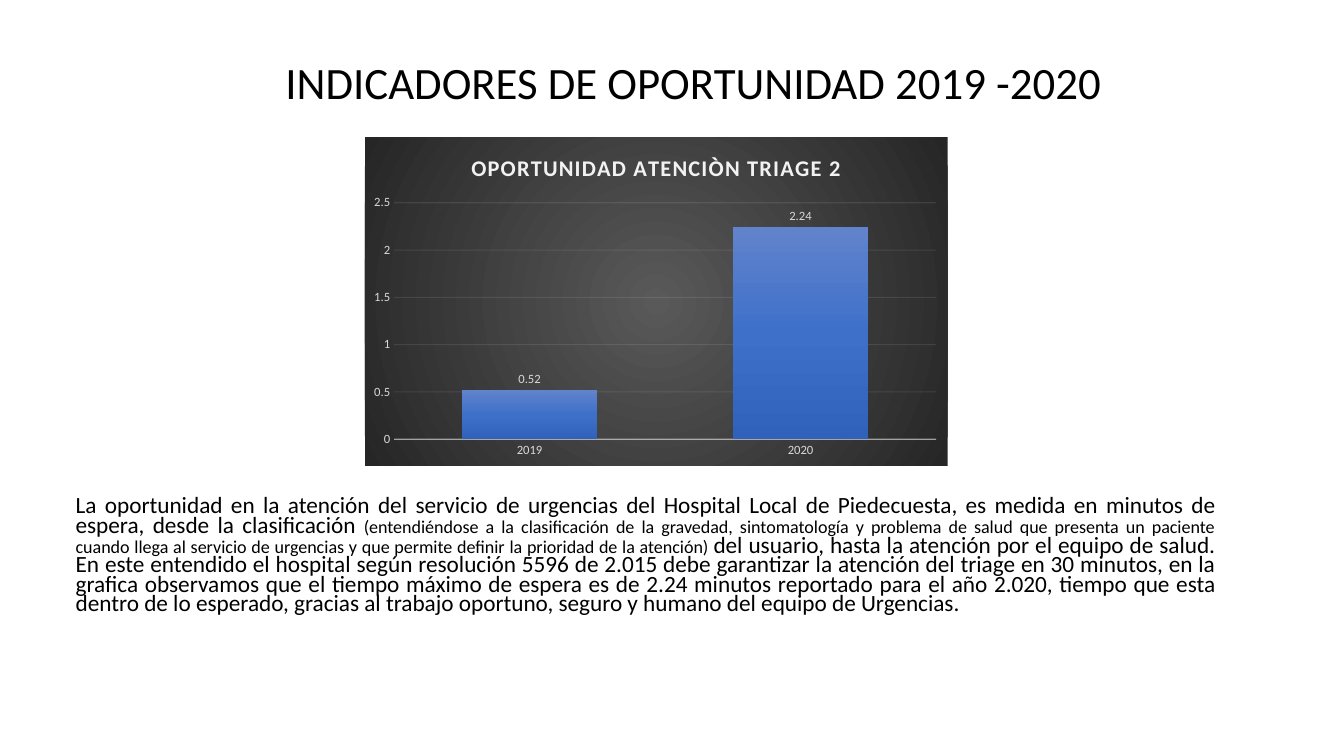
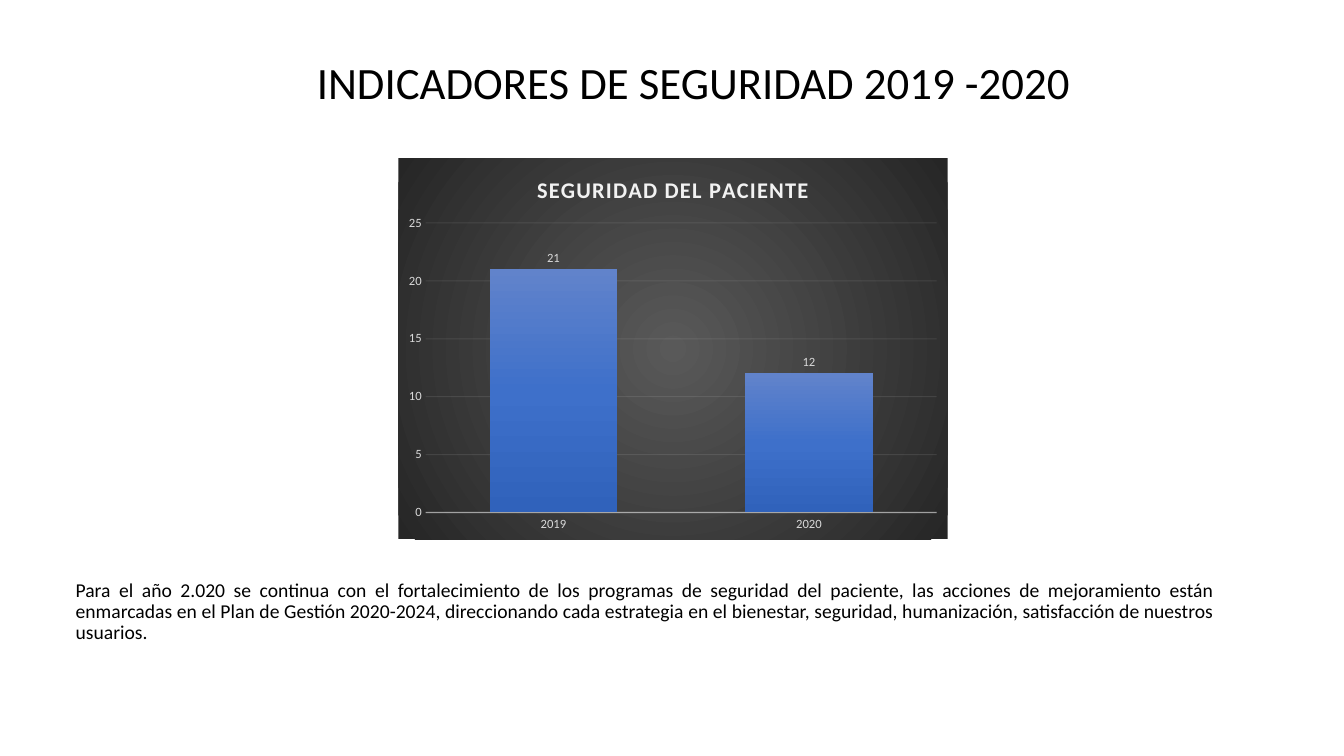
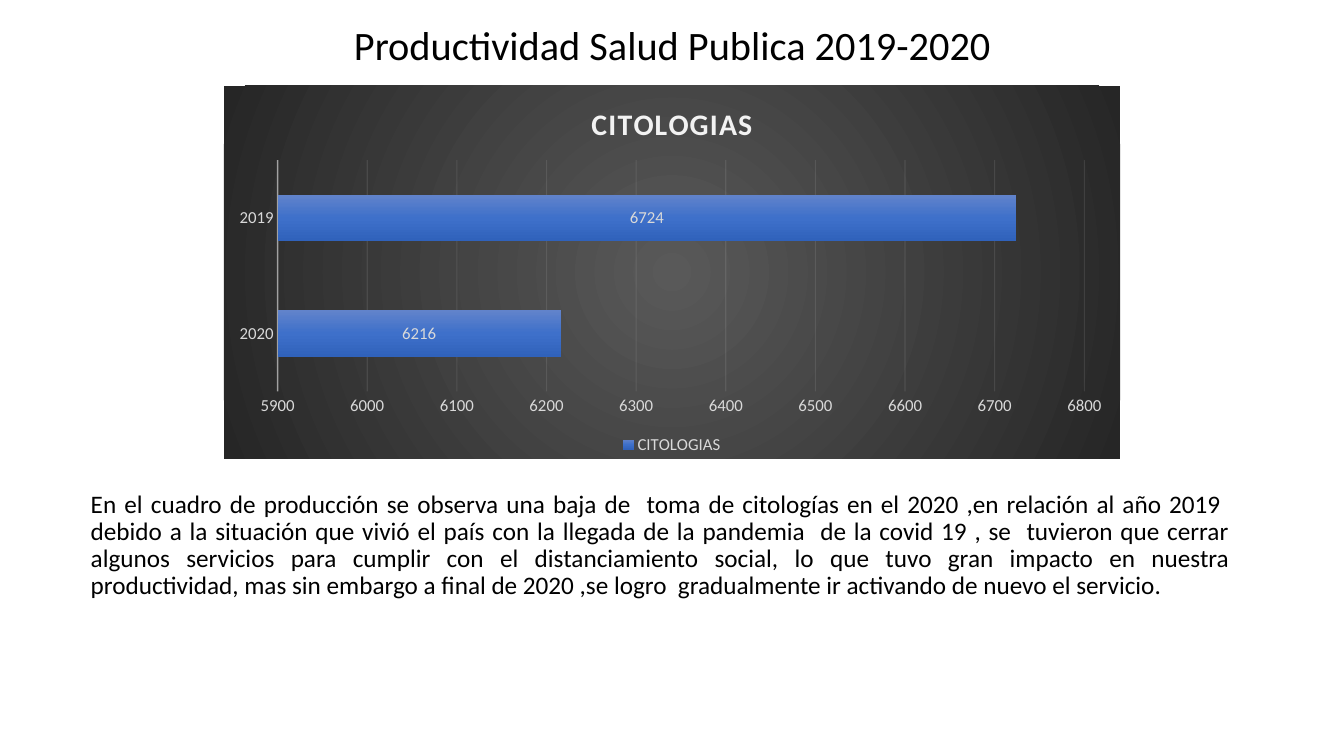
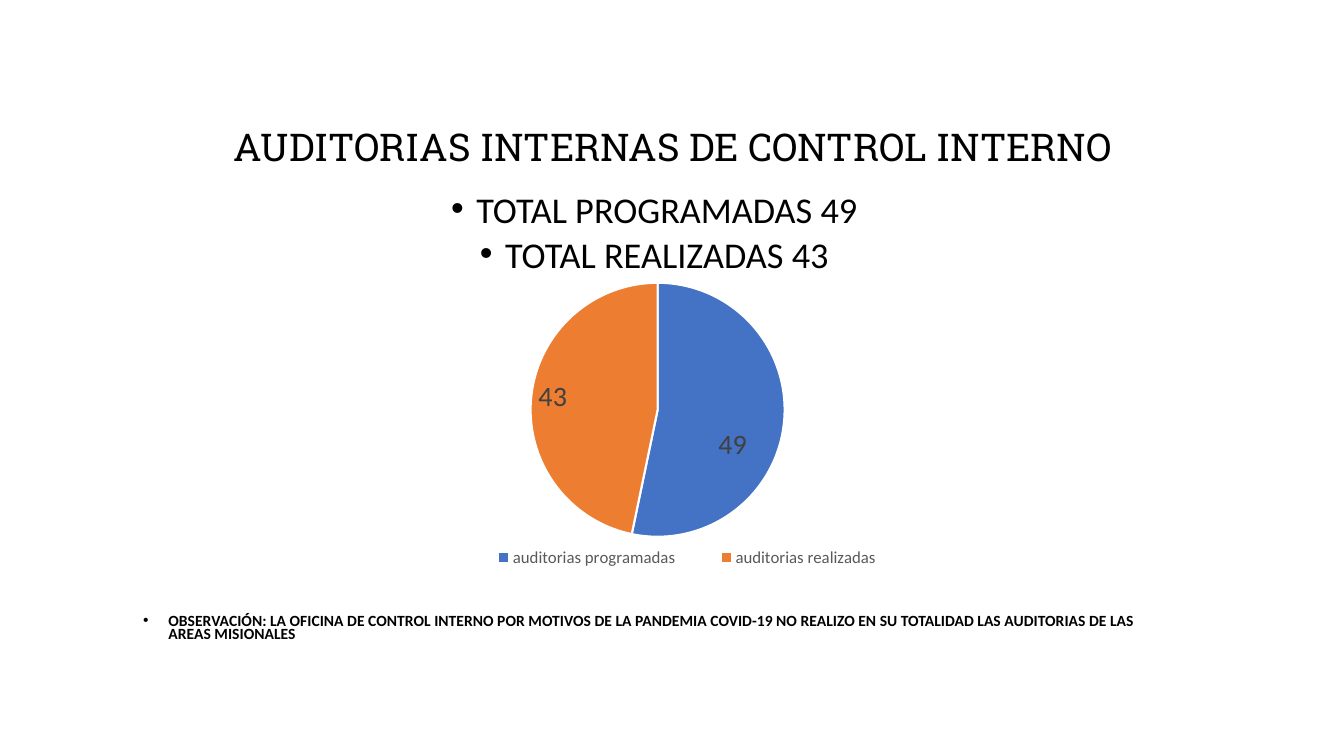
from dataclasses import dataclass

from lxml import etree
from pptx import Presentation
from pptx.chart.data import CategoryChartData
from pptx.dml.color import RGBColor
from pptx.enum import chart as ch, text as tx
from pptx.oxml.ns import nsdecls, qn
from pptx.util import Inches, Pt


@dataclass(frozen=True)
class Theme:
    font: str = "Calibri"
    slab: str = "Roboto Slab"
    ink: str = "000000"
    white: str = "FFFFFF"
    chart_title: str = "F2F2F2"
    chart_text: str = "D9D9D9"
    legend_text: str = "595959"
    pie_text: str = "404040"
    backdrop: tuple = ((0, "595959"), (100, "262626"))
    bar: tuple = ((0, "6183CB"), (50, "3E70CA"), (100, "3062BB"))
    slices: tuple = ("4472C4", "ED7D31")
    title_size: float = 32
    pie_label_size: float = 20
    legend_size: float = 12


THEME = Theme()
TITLE_BOX = (1.13, 0.12, 11.5, 1.45)
CENTER, JUSTIFY = tx.PP_ALIGN.CENTER, tx.PP_ALIGN.JUSTIFY
RADIAL = ('<a:path path="circle"><a:fillToRect l="50000" t="50000" '
          'r="50000" b="50000"/></a:path>')
DOWNWARD = '<a:lin ang="5400000" scaled="0"/>'


def style(font, size, color=THEME.ink, bold=False, name=THEME.font):
    font.name, font.size, font.bold = name, Pt(size), bold
    font.color.rgb = RGBColor.from_string(color)


def move(shape, box):
    shape.left, shape.top, shape.width, shape.height = map(Inches, box)


def fill_placeholder(shape, box, paragraphs, anchor=tx.MSO_ANCHOR.MIDDLE):
    """Move a placeholder and give it one paragraph per list of text pieces."""
    move(shape, box)
    frame = shape.text_frame
    frame.word_wrap, frame.auto_size = True, tx.MSO_AUTO_SIZE.NONE
    frame.vertical_anchor = anchor
    for number, pieces in enumerate(paragraphs):
        paragraph = frame.add_paragraph() if number else frame.paragraphs[0]
        for piece in pieces:
            paragraph.add_run().text = piece
    return frame.paragraphs


def set_title(slide, words, box=TITLE_BOX, size=THEME.title_size, font=THEME.font):
    [title] = fill_placeholder(slide.shapes.title, box, [[words]])
    title.alignment, title.line_spacing = CENTER, 0.9
    style(title.font, size, name=font)


def indent(paragraph, hanging):
    props = paragraph._p.get_or_add_pPr()
    props.set("marL", str(Inches(hanging)))
    props.set("indent", str(-Inches(hanging)))
    return props


def set_comment(slide, pieces, box, size, spacing=0.9):
    [comment] = fill_placeholder(slide.placeholders[1], box, [pieces])
    etree.SubElement(indent(comment, 0), qn("a:buNone"))
    comment.alignment, comment.line_spacing = JUSTIFY, spacing
    comment.space_before = Pt(0)
    style(comment.font, size)
    return comment


def gradient(stops, direction):
    marks = "".join(f'<a:gs pos="{at * 1000}"><a:srgbClr val="{color}"/></a:gs>'
                    for at, color in stops)
    return etree.fromstring(f'<a:gradFill {nsdecls("a")} rotWithShape="1">'
                            f'<a:gsLst>{marks}</a:gsLst>{direction}</a:gradFill>')


def set_layout(parent, index, **fractions):
    """Place a chart part by hand, in fractions of the chart's size."""
    for old in parent.findall(qn("c:layout")):
        parent.remove(old)
    layout = etree.Element(qn("c:layout"))
    manual = etree.SubElement(layout, qn("c:manualLayout"))
    for tag, value in fractions.items():
        etree.SubElement(manual, qn(f"c:{tag}")).set("val", str(value))
    parent.insert(index, layout)


def set_plot_area(chart, x, y, w, h):
    set_layout(chart.element.xpath("c:chart/c:plotArea")[0], 0, layoutTarget="inner",
               xMode="edge", yMode="edge", x=x, y=y, w=w, h=h)


def add_chart(slide, kind, box, categories, name, values):
    data = CategoryChartData()
    data.categories = categories
    data.add_series(name, values)
    chart = slide.shapes.add_chart(kind, *map(Inches, box), data).chart
    style(chart.font, 10)
    chart.has_title = chart.has_legend = False
    plot = chart.plots[0]
    plot.vary_by_categories = False
    plot.has_data_labels = True
    plot.data_labels.show_value = True
    return chart


def add_legend(chart, color):
    chart.has_legend = True
    chart.legend.position = ch.XL_LEGEND_POSITION.BOTTOM
    chart.legend.include_in_layout = False
    style(chart.legend.font, THEME.legend_size, color)


def set_chart_title(chart, words, size):
    chart.has_title = True
    frame = chart.chart_title.text_frame
    frame.text = words
    run = frame.paragraphs[0].runs[0]
    style(run.font, size, THEME.chart_title, bold=True)
    run._r.get_or_add_rPr().set("spc", "100")
    chart.chart_title.include_in_layout = False


def set_line(chart, line, width, place, opacity):
    line.width = Pt(width)
    line.color.rgb = RGBColor.from_string(THEME.chart_title)
    [color] = chart.element.xpath(f"c:chart/c:plotArea/{place}//a:srgbClr")
    etree.SubElement(color, qn("a:alpha")).set("val", str(opacity * 1000))


def style_axes(chart, size, scale):
    category, value = chart.category_axis, chart.value_axis
    value.minimum_scale, value.maximum_scale, value.major_unit = scale
    value.has_major_gridlines = True
    for axis in (category, value):
        axis.major_tick_mark = axis.minor_tick_mark = ch.XL_TICK_MARK.NONE
        style(axis.tick_labels.font, size, THEME.chart_text)
    value.format.line.fill.background()
    set_line(chart, category.format.line, 1, "c:catAx/c:spPr", 54)
    set_line(chart, value.major_gridlines.format.line, 0.75, "c:valAx/c:majorGridlines", 10)


def add_dark_bars(slide, box, title, categories, values, scale, plot_area,
                  kind=ch.XL_CHART_TYPE.COLUMN_CLUSTERED, name="Series 1",
                  title_size=16, size=9, gap=100, overlap=-24,
                  label_place=ch.XL_LABEL_POSITION.OUTSIDE_END):
    chart = add_chart(slide, kind, box, categories, name, values)
    set_chart_title(chart, title, title_size)
    style_axes(chart, size, scale)
    plot = chart.plots[0]
    plot.gap_width, plot.overlap = gap, overlap
    plot.data_labels.position = label_place
    style(plot.data_labels.font, size, THEME.chart_text)
    [bars] = chart.element.xpath(".//c:ser")
    bars.get_or_add_spPr().append(gradient(THEME.bar, DOWNWARD))
    backdrop = etree.Element(qn("c:spPr"))
    backdrop.append(gradient(THEME.backdrop, RADIAL))
    etree.SubElement(etree.SubElement(backdrop, qn("a:ln")), qn("a:noFill"))
    chart.element.find(qn("c:chart")).addnext(backdrop)
    set_plot_area(chart, *plot_area)
    return chart


def add_audit_pie(slide):
    chart = add_chart(slide, ch.XL_CHART_TYPE.PIE, (3.72, 2.68, 5.9, 3.15),
                      ("auditorias programadas", "auditorias realizadas"),
                      "Series 1", (49, 43))
    plot = chart.plots[0]
    plot.vary_by_categories = True
    style(plot.data_labels.font, THEME.pie_label_size, THEME.pie_text)
    label_shifts = ((0.02, 0.09), (-0.07, -0.02))
    for number, (color, (x, y)) in enumerate(zip(THEME.slices, label_shifts)):
        point = plot.series[0].points[number]
        point.format.fill.solid()
        point.format.fill.fore_color.rgb = RGBColor.from_string(color)
        point.format.line.color.rgb = RGBColor.from_string(THEME.white)
        point.format.line.width = Pt(1.5)
        style(point.data_label.font, THEME.pie_label_size, THEME.pie_text)
        point.data_label.position = ch.XL_LABEL_POSITION.CENTER
        set_layout(chart.element.xpath(".//c:dLbl")[number], 1, x=x, y=y)
    add_legend(chart, THEME.legend_text)
    set_layout(chart.element.xpath("c:chart/c:legend")[0], 1, xMode="edge",
               yMode="edge", x=0.14, y=0.86, w=0.77, h=0.09)
    set_plot_area(chart, 0.26, 0.04, 0.43, 0.8)


def opportunity_slide(slide):
    set_title(slide, "INDICADORES DE OPORTUNIDAD 2019 -2020")
    add_dark_bars(slide, (3.62, 1.36, 5.78, 3.26), "OPORTUNIDAD ATENCIÒN TRIAGE 2",
                  ("2019", "2020"), (0.52, 2.24), (0, 2.5, 0.5), (0.05, 0.2, 0.93, 0.72))
    comment = set_comment(slide, (
        "La oportunidad en la atención del servicio de urgencias del Hospital Local de "
        "Piedecuesta, es medida en minutos de espera, desde la clasificación ",
        "(entendiéndose a la clasificación de la gravedad, sintomatología y problema de "
        "salud que presenta un paciente cuando llega al servicio de urgencias y que "
        "permite definir la prioridad de la atención) ",
        "del usuario, hasta la atención por el equipo de salud. En este entendido el "
        "hospital según resolución 5596 de 2.015 debe garantizar la atención del triage "
        "en 30 minutos, en la grafica observamos que el tiempo máximo de espera es de "
        "2.24 minutos reportado para el año 2.020, tiempo que esta dentro de lo "
        "esperado, gracias al trabajo oportuno, seguro y humano del equipo de Urgencias.",
    ), (0.65, 4.8, 11.5, 1.45), 16.6, spacing=0.7)
    comment.runs[1].font.size = Pt(12.9)


def safety_slide(slide):
    set_title(slide, "INDICADORES DE SEGURIDAD 2019 -2020")
    add_dark_bars(slide, (3.95, 1.57, 5.45, 3.78), "SEGURIDAD DEL PACIENTE",
                  ("2019", "2020"), (21, 12), (0, 25, 5), (0.05, 0.17, 0.93, 0.76))
    set_comment(slide, [
        "Para el año 2.020 se continua con el fortalecimiento de los programas de "
        "seguridad del paciente, las acciones de mejoramiento están enmarcadas en el "
        "Plan de Gestión 2020-2024, direccionando cada estrategia en el bienestar, "
        "seguridad, humanización, satisfacción de nuestros usuarios.",
    ], (0.65, 5.35, 11.5, 1.45), 14)


def productivity_slide(slide):
    set_title(slide, "Productividad Salud Publica 2019-2020", (0.92, 0.25, 11.5, 0.45), 28.8)
    chart = add_dark_bars(slide, (2.22, 0.85, 8.89, 3.7), "CITOLOGIAS",
                          ("2020", "2019"), (6216, 6724), (5900, 6800, 100),
                          (0.06, 0.2, 0.9, 0.62), kind=ch.XL_CHART_TYPE.BAR_STACKED,
                          name="CITOLOGIAS", title_size=21.3, size=12, gap=150,
                          overlap=100, label_place=ch.XL_LABEL_POSITION.CENTER)
    add_legend(chart, THEME.chart_text)
    set_comment(slide, [
        "En el cuadro de producción se observa una baja de  toma de citologías en el "
        "2020 ,en relación al año 2019  debido a la situación que vivió el país con la "
        "llegada de la pandemia  de la covid 19 , se  tuvieron que cerrar algunos "
        "servicios para cumplir con el distanciamiento social, lo que tuvo gran impacto "
        "en nuestra productividad, mas sin embargo a final de 2020 ,se logro  "
        "gradualmente ir activando de nuevo el servicio.",
    ], (0.8, 4.69, 11.5, 1.45), 18)


def audit_slide(slide):
    set_title(slide, "AUDITORIAS INTERNAS DE CONTROL INTERNO", (1.67, 0.9, 10, 1.15),
              27.3, THEME.slab)
    items = fill_placeholder(slide.placeholders[1], (1.32, 1.93, 10.34, 4.65), [
        ["TOTAL PROGRAMADAS 49"],
        ["TOTAL REALIZADAS 43"],
        ["OBSERVACIÓN: LA OFICINA DE CONTROL INTERNO POR MOTIVOS DE LA PANDEMIA "
         "COVID-19 NO REALIZO EN SU TOTALIDAD LAS AUDITORIAS DE LAS AREAS MISIONALES"],
    ], tx.MSO_ANCHOR.TOP)
    for item, gap in zip(items, (0, 10, 244)):
        indent(item, 0.25)
        item.line_spacing, item.space_before = 0.7, Pt(gap)
        item.alignment = CENTER
        style(item.font, 25.9)
    items[-1].alignment = tx.PP_ALIGN.LEFT
    style(items[-1].font, 11.1, bold=True)
    add_audit_pie(slide)


def main():
    deck = Presentation()
    deck.slide_width, deck.slide_height = Inches(13.33), Inches(7.5)
    for build in (opportunity_slide, safety_slide, productivity_slide, audit_slide):
        build(deck.slides.add_slide(deck.slide_layouts[1]))
    deck.save("out.pptx")


if __name__ == "__main__":
    main()
